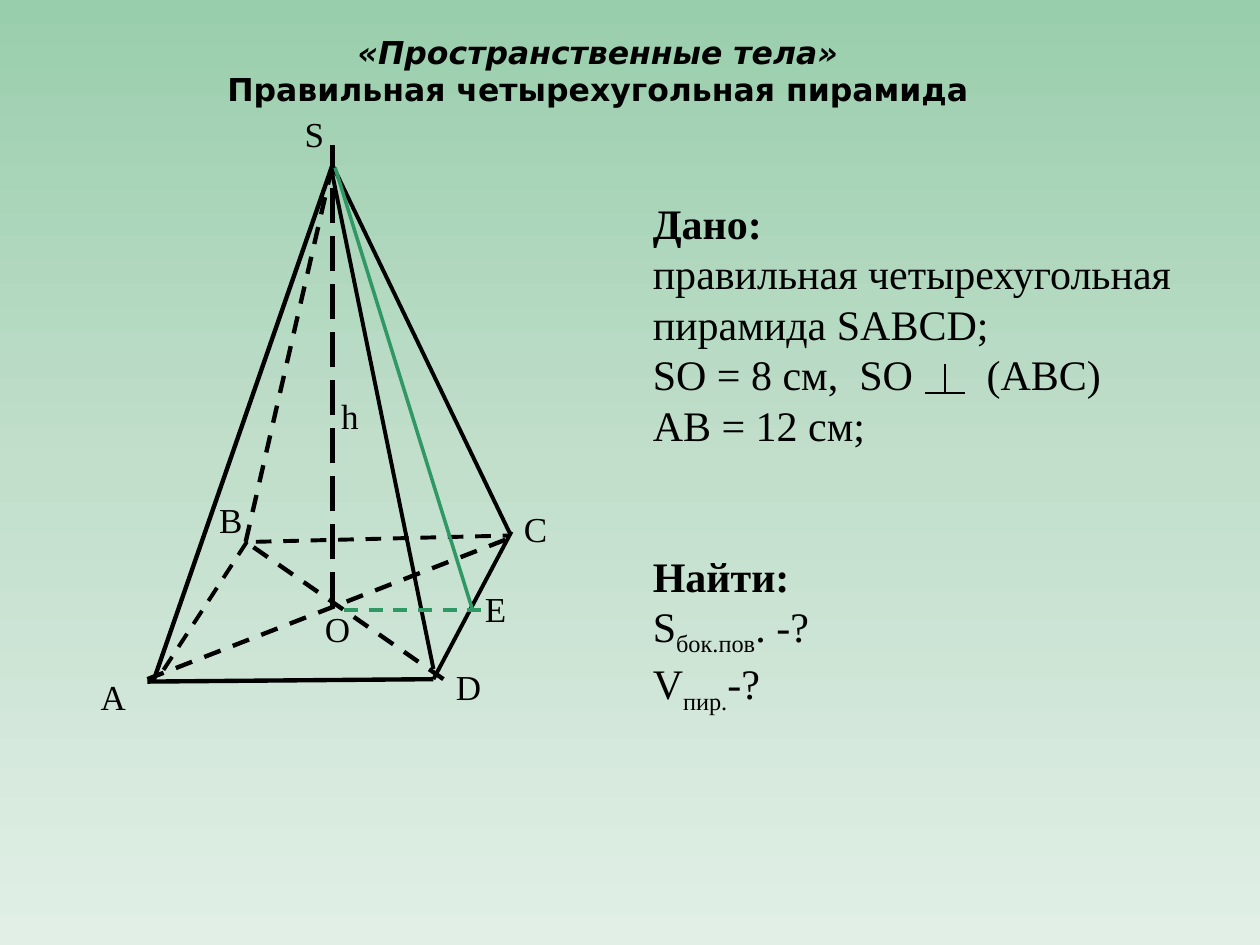
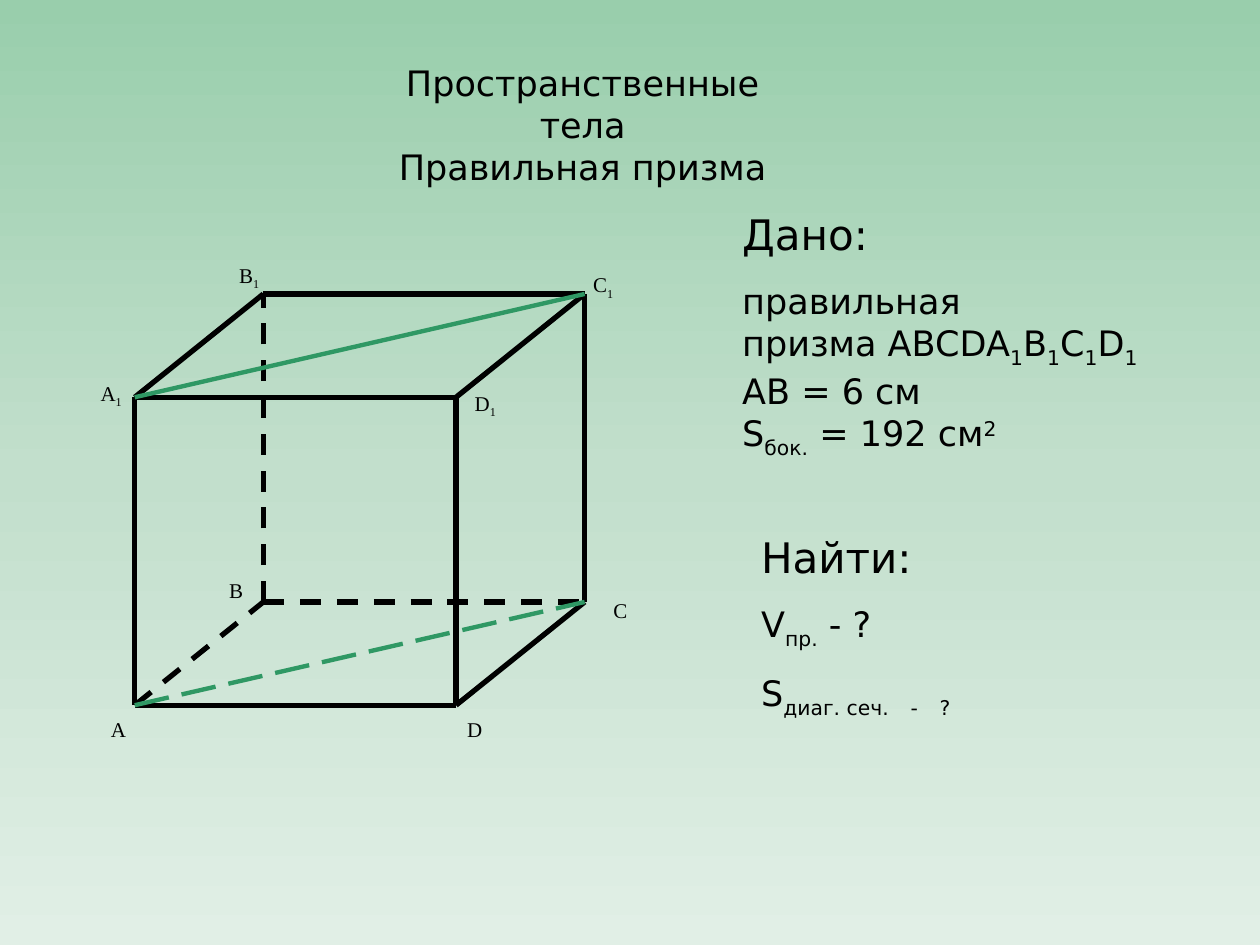
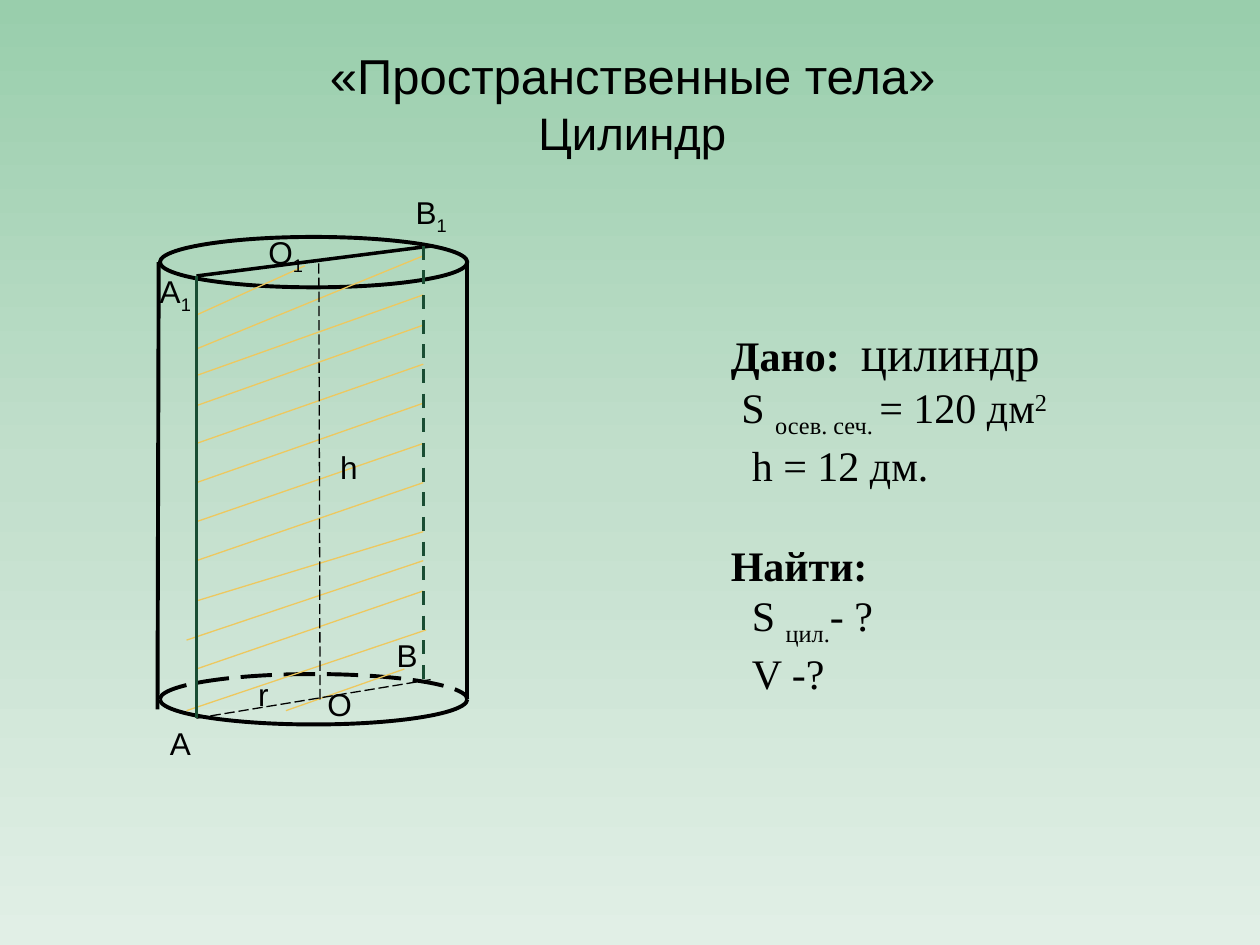
from copy import deepcopy
from dataclasses import dataclass

from lxml.etree import SubElement
from pptx import Presentation
from pptx.dml.color import RGBColor
from pptx.enum.dml import MSO_LINE
from pptx.enum.shapes import MSO_CONNECTOR, MSO_SHAPE
from pptx.enum.text import MSO_ANCHOR, MSO_AUTO_SIZE, PP_ALIGN
from pptx.oxml.ns import qn
from pptx.util import Pt


@dataclass(frozen=True)
class Theme:
    background = ((0, "99CEAC"), (0.5, "C2DFCC"), (1, "E1EFE6"))
    black = "000000"
    green = "2F9864"
    dark_green = "194D33"
    yellow = "EEC85E"
    serif = "Times New Roman"
    sans = "Arial"
    wide = "DejaVu Sans"
    heading = 24
    large = 28
    subscript = "-25000"
    superscript = "30000"


theme = Theme()
DASH, LONG = MSO_LINE.DASH, MSO_LINE.LONG_DASH


def write_text(shape, box, font, paragraphs, anchor=MSO_ANCHOR.MIDDLE, align=PP_ALIGN.LEFT):
    """Place a shape and fill it.

    Marks: _x_ subscript, _^x_ superscript, _*x_ large and regular, _>n_ a space widened by n points.
    """
    shape.left, shape.top, shape.width, shape.height = map(Pt, box)
    frame = shape.text_frame
    frame.word_wrap = True
    frame.auto_size = MSO_AUTO_SIZE.NONE
    frame.vertical_anchor = anchor
    for index, (text, size, style) in enumerate(paragraphs):
        paragraph = frame.paragraphs[0] if index == 0 else frame.add_paragraph()
        paragraph.alignment = align
        paragraph.space_before = Pt(style.get("before", 0))
        paragraph._p.get_or_add_pPr().set("marL", str(Pt(style.get("indent", 0))))
        paragraph.font.name = font
        paragraph.font.size = Pt(size)
        paragraph.font.bold = style.get("bold", False)
        paragraph.font.italic = style.get("italic", False)
        paragraph.font.color.rgb = RGBColor.from_string(theme.black)
        for part_index, part in enumerate(text.split("_")):
            if not part:
                continue
            run = paragraph.add_run()
            run.text = part.lstrip("^*")
            if part.startswith("*"):
                run.font.size = Pt(theme.large)
                run.font.bold = False
            elif part.startswith(">"):
                run.text = " "
                run._r.get_or_add_rPr().set("spc", str(int(float(part[1:]) * 100)))
            elif part_index % 2:
                raised = part.startswith("^")
                run._r.get_or_add_rPr().set("baseline", theme.superscript if raised else theme.subscript)


def add_line(slide, start, end, width, color=theme.black, dash=None):
    line = slide.shapes.add_connector(MSO_CONNECTOR.STRAIGHT, *map(Pt, (*start, *end)))
    line.line.color.rgb = RGBColor.from_string(color)
    line.line.width = Pt(width)
    if dash:
        line.line.dash_style = dash
    SubElement(line._element.spPr, qn("a:effectLst"))


presentation = Presentation()
presentation.slide_width, presentation.slide_height = Pt(720), Pt(540)

# Shared background and plain body text on the master
master = presentation.slide_master
background = master.background.fill
background.gradient()
background.gradient_angle = 270
stop_list = master.element.find(".//" + qn("a:gsLst"))
stop_list.append(deepcopy(stop_list[0]))
for stop, (position, color) in zip(background.gradient_stops, theme.background):
    stop.position = position
    stop.color.rgb = RGBColor.from_string(color)
body_level = master.element.find(f".//{qn('p:bodyStyle')}/{qn('a:lvl1pPr')}")
body_level.set("indent", "0")
bullet = body_level.find(qn("a:buChar"))
bullet.addprevious(bullet.makeelement(qn("a:buNone")))
body_level.remove(bullet)

# Pyramid
pyramid = presentation.slides.add_slide(presentation.slide_layouts[1])
write_text(pyramid.shapes.title, (121.7, 15, 440, 50.5), theme.wide, [
    ("«Пространственные тела»", 18, {"bold": True, "italic": True}),
    ("Правильная четырехугольная пирамида", 18, {"bold": True}),
], align=PP_ALIGN.CENTER)
write_text(pyramid.placeholders[1], (365.8, 109.2, 314, 384), theme.serif, [
    ("Дано:", theme.heading, {"bold": True}),
    ("правильная четырехугольная", theme.heading, {}),
    ("пирамида SАВСD;", theme.heading, {}),
    ("SO = 8 см,_>6_SO_>36_(ABC)", theme.heading, {}),
    ("АВ = 12 см;", theme.heading, {}),
    ("Найти:", theme.heading, {"bold": True, "before": 57.5}),
    ("S_бок.пов_. -?", theme.heading, {}),
    ("V_пир._-?", theme.heading, {}),
], anchor=MSO_ANCHOR.TOP)

apex = (190, 94.3)
pyramid_lines = [
    (apex, (291.6, 305.3), 2.25),
    ((190, 100), (247.7, 382.3), 2.25),
    ((87.8, 388.8), apex, 2.5),
    ((146.2, 309.6), (291.6, 306), 2.25, theme.black, DASH),
    ((141.1, 309.6), (90, 388.1), 2.25, theme.black, DASH),
    ((84.2, 389.5), (247.7, 388.1), 2.5),
    ((140.4, 309.6), apex, 2.5, theme.black, DASH),
    ((84.2, 388.1), (289.4, 308.2), 2.5, theme.black, DASH),
    ((253.4, 388.1), (140.4, 309.6), 2.5, theme.black, DASH),
    ((292.3, 303.8), (247.7, 388.1), 2.25),
    ((190, 347), (190, 82.8), 2.5, theme.black, LONG),
    ((191.5, 95.8), (270, 348.5), 2, theme.green),
    ((196.6, 348.5), (275.8, 348.5), 2, theme.green, DASH),
    # Perpendicular sign in the given data
    ((528.5, 224.6), (551.5, 224.6), 0.75),
    ((540, 224.6), (540, 208.1), 0.75),
]
pyramid_labels = [
    ("S", 167, 60.5, 25, 28), ("C", 292.3, 286.6, 29, 20), ("D", 253.4, 376.6, 29, 32),
    ("А", 50.4, 382.3, 34, 20), ("B", 118.1, 281.5, 28, 32), ("h", 187.9, 221.8, 25, 20),
    ("O", 178.6, 343.4, 30, 21), ("E", 270, 331.9, 29, 32),
]

# Prism
prism = presentation.slides.add_slide(presentation.slide_layouts[3])
write_text(prism.shapes.title, (201.6, 43.2, 262.8, 55.4), theme.wide, [
    ("Пространственные тела", 20, {}),
    ("Правильная призма", 20, {}),
], align=PP_ALIGN.CENTER)
write_text(prism.placeholders[1], (416.9, 105.8, 242.6, 170), theme.wide, [
    ("Дано:", theme.heading, {}),
    ("правильная", 20, {"before": 12}),
    ("призма ABCDA_1_B_1_C_1_D_1_", 20, {}),
    ("AB = 6 см", 20, {}),
    ("S_бок._ = 192 см_^2_", 20, {}),
])
write_text(prism.placeholders[2], (427.7, 303.1, 147.6, 108.7), theme.wide, [
    ("Найти:", theme.heading, {}),
    ("V_пр._ - ?", 20, {"before": 12}),
    ("S_диаг. сеч._>6_-_>6_?", 20, {"before": 12}),
])

prism_height = 176
base = {"A": (77, 403), "B": (150.5, 344), "C": (334.1, 344), "D": (260.6, 403)}
top = {name: (x, y - prism_height) for name, (x, y) in base.items()}
prism_lines = []
for first, second in ("AB", "BC", "CD", "DA"):
    hidden = DASH if "B" in (first, second) else None
    prism_lines += [
        (base[first], base[second], 3, theme.black, hidden),
        (top[first], top[second], 3),
        (base[first], top[first], 3, theme.black, DASH if first == "B" else None),
    ]
prism_lines += [
    (base["A"], base["C"], 2.5, theme.green, LONG),
    (top["A"], top["C"], 2.5, theme.green),
]
prism_labels = [
    ("A_1_", 50.4, 213.8, 42, 37), ("B_1_", 129.6, 146.2, 35, 33), ("C_1_", 331.9, 151.9, 40, 33),
    ("D_1_", 264.2, 219.6, 32, 31), ("B", 123.8, 326.2, 32, 22), ("D", 259.9, 406.1, 29, 32),
    ("A", 56.2, 406.1, 26, 27), ("C", 343.4, 337.7, 33, 24),
]

# Cylinder
cylinder = presentation.slides.add_slide(presentation.slide_layouts[1])
write_text(cylinder.shapes.title, (175.7, 22.3, 371.5, 72.7), theme.sans, [
    ("«Пространственные тела»", theme.large, {}),
    ("Цилиндр", 26, {}),
], align=PP_ALIGN.CENTER)
write_text(cylinder.placeholders[1], (410.4, 183.6, 236, 216), theme.serif, [
    ("Дано:_>6__*цилиндр_", theme.heading, {"bold": True}),
    ("S _осев. сеч. _= 120 дм_^2_", theme.heading, {"indent": 6}),
    ("h = 12 дм.", theme.heading, {"indent": 12}),
    ("Найти:", theme.heading, {"bold": True, "before": 28.5}),
    ("S _цил._- ?", theme.heading, {"indent": 12}),
    ("V -?", theme.heading, {"indent": 12}),
])

# Hatching of the axial section, then its outline and the axis
section_left, section_right = 112.3, 241.9
hatch_heights = [
    (199.4, 146.2), (214.6, 168.5), (231.8, 185.8), (253.4, 208.1), (275.8, 230.4),
    (298.1, 253.4), (320.4, 275.8), (343.4, 303.8), (382.3, 337.7),
]
cylinder_lines = [
    ((section_left, left_y), (section_right, right_y), 0.75, theme.yellow)
    for left_y, right_y in hatch_heights
] + [
    ((section_left, 180), (174.2, 151.9), 0.75, theme.yellow),
    ((106.6, 365.8), (section_right, 320.4), 0.75, theme.yellow),
    ((106.6, 406.1), (243.4, 360), 0.75, theme.yellow),
    ((163.4, 406.1), (231.1, 382.3), 0.75, theme.yellow),
    ((90.7, 149.8), (90, 405.4), 2.25),
    ((267.1, 149.8), (267.1, 399.6), 2.25),
    ((section_left, 157.7), (247.7, 140.4), 2),
    ((section_left, 410.4), (247.7, 388.1), 0.75, theme.black, LONG),
    ((182.2, 150.5), (182.9, 400.3), 0.75, theme.black, LONG),
    ((section_left, 157.7), (section_left, 410.4), 2, theme.dark_green),
    ((section_right, 140.4), (section_right, 388.1), 2, theme.dark_green, DASH),
]
cylinder_labels = [
    ("В", 219.6, 360, 28, 28), ("h", 187.2, 252.7, 32, 30), ("О", 180, 388.1, 40, 28),
    ("О_1_", 146.2, 129.6, 35, 30), ("А", 90, 410.4, 32, 30), ("А_1_", 84.2, 151.9, 37, 40),
    ("В_1_", 230.4, 106.6, 36, 40), ("r", 140.4, 382.3, 32, 30),
]

# Rims: a full ellipse above, a solid front and a dashed back below (angles in degrees)
for kind, rim_top, angles, dash in (
    (MSO_SHAPE.OVAL, 135.4, (), None),
    (MSO_SHAPE.ARC, 385.2, (0, 180), None),
    (MSO_SHAPE.ARC, 385.2, (180, 0), LONG),
):
    rim = cylinder.shapes.add_shape(kind, Pt(91.4), Pt(rim_top), Pt(175.7), Pt(28.8))
    for index, angle in enumerate(angles):
        rim.adjustments[index] = angle * 0.6
    rim.shadow.inherit = False
    rim.fill.background()
    rim.line.color.rgb = RGBColor.from_string(theme.black)
    rim.line.width = Pt(2.25)
    if dash:
        rim.line.dash_style = dash

# Edges and vertex names of all three solids
for slide, lines, labels, font, size in (
    (pyramid, pyramid_lines, pyramid_labels, theme.serif, 20),
    (prism, prism_lines, prism_labels, theme.serif, 12),
    (cylinder, cylinder_lines, cylinder_labels, theme.sans, 18),
):
    for line in lines:
        add_line(slide, *line)
    for text, *box in labels:
        label = slide.shapes.add_textbox(0, 0, 0, 0)
        write_text(label, box, font, [(text, size, {})], anchor=MSO_ANCHOR.TOP)

presentation.save("out.pptx")
